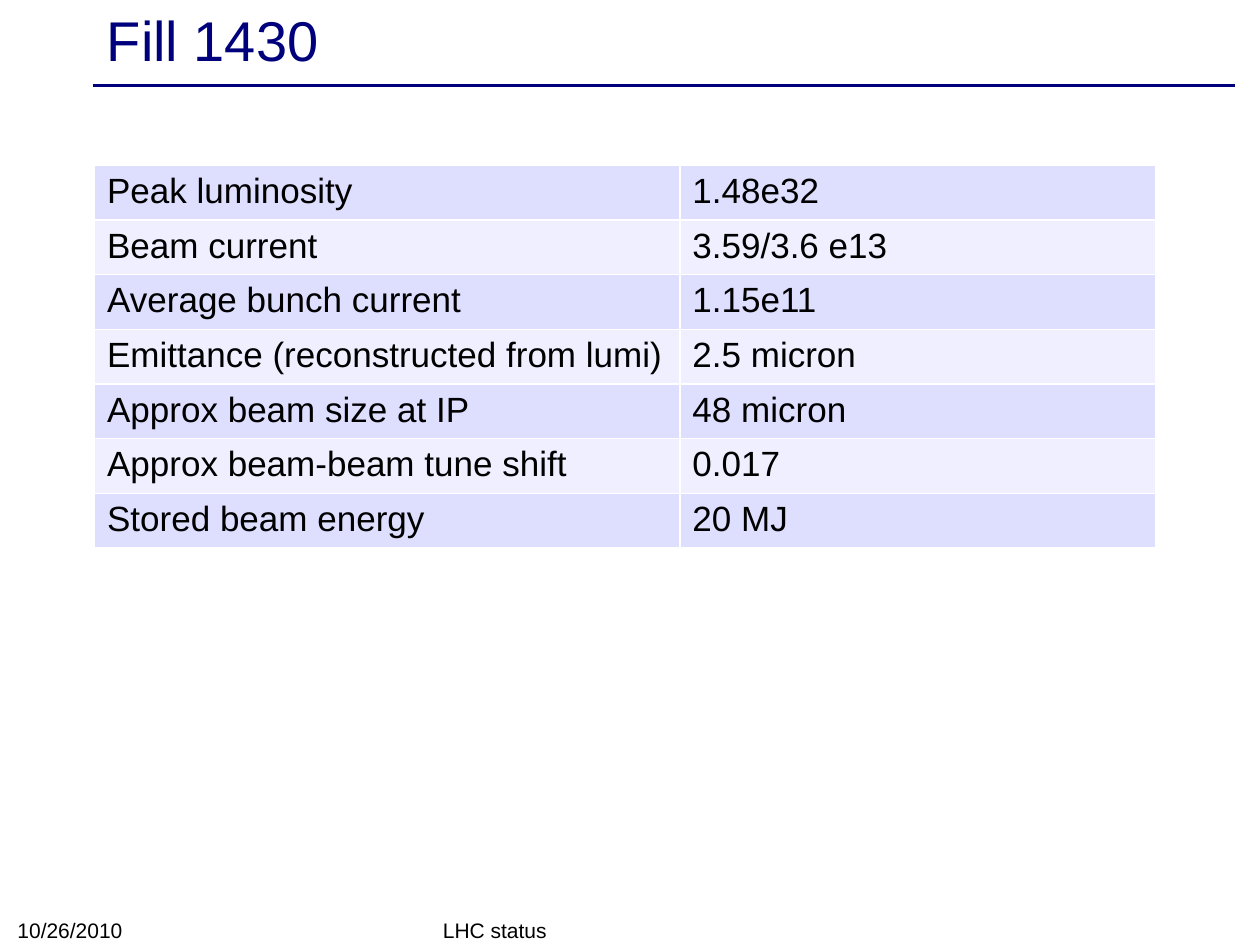
from lxml.etree import SubElement
from pptx import Presentation
from pptx.dml.color import RGBColor
from pptx.enum.shapes import MSO_CONNECTOR
from pptx.enum.text import MSO_ANCHOR, PP_ALIGN
from pptx.oxml.ns import qn
from pptx.util import Pt

NAVY, BLACK, WHITE = "00007D", "000000", "FFFFFF"
BANDS = ("DEDEFF", "EFEFFF")
FILL_FACTS = [
    ("Peak luminosity", "1.48e32"),
    ("Beam current", "3.59/3.6 e13"),
    ("Average bunch current", "1.15e11"),
    ("Emittance (reconstructed from lumi)", "2.5 micron"),
    ("Approx beam size at IP", "48 micron"),
    ("Approx beam-beam tune shift", "0.017"),
    ("Stored beam energy", "20 MJ"),
]


def color(hex_string):
    return RGBColor.from_string(hex_string)


class SlideBuilder:
    font = "Arial"

    def __init__(self, slide):
        self.slide = slide

    def add_span(self, frame, text, size, ink):
        para = frame.paragraphs[0]
        para.alignment = PP_ALIGN.LEFT
        span = para.add_run()
        span.text = text
        span.font.name = self.font
        span.font.size = Pt(size)
        span.font.color.rgb = color(ink)

    def text(self, left, top, width, height, text, size, ink, anchor):
        box = self.slide.shapes.add_textbox(Pt(left), Pt(top), Pt(width), Pt(height))
        frame = box.text_frame
        frame.word_wrap = True
        frame.vertical_anchor = anchor
        self.add_span(frame, text, size, ink)

    def rule(self, left, right, y, ink, weight):
        line = self.slide.shapes.add_connector(
            MSO_CONNECTOR.STRAIGHT, Pt(left), Pt(y), Pt(right), Pt(y))
        line.line.color.rgb = color(ink)
        line.line.width = Pt(weight)
        SubElement(line._element.spPr, qn("a:effectLst"))

    def border(self, cell, ink, weight):
        """Draw the same line on all four sides; call before filling the cell."""
        properties = cell._tc.get_or_add_tcPr()
        for side in ("a:lnL", "a:lnR", "a:lnT", "a:lnB"):
            line = SubElement(properties, qn(side), w=str(Pt(weight)))
            fill = SubElement(line, qn("a:solidFill"))
            SubElement(fill, qn("a:srgbClr"), val=ink)

    def table(self, left, top, widths, row_height, rows, size):
        frame = self.slide.shapes.add_table(
            len(rows), len(widths), Pt(left), Pt(top),
            Pt(sum(widths)), Pt(row_height * len(rows)))
        table = frame.table
        for column, width in zip(table.columns, widths):
            column.width = Pt(width)
        for index, values in enumerate(rows):
            table.rows[index].height = Pt(row_height)
            for cell, value in zip(table.rows[index].cells, values):
                self.border(cell, WHITE, 1)
                cell.fill.solid()
                cell.fill.fore_color.rgb = color(BANDS[index % 2])
                self.add_span(cell.text_frame, value, size, BLACK)


def main():
    deck = Presentation()
    deck.slide_width, deck.slide_height = Pt(720), Pt(540)
    builder = SlideBuilder(deck.slides.add_slide(deck.slide_layouts[6]))
    builder.rule(53, 706, 49, NAVY, 2)
    builder.text(54, 2, 648, 41, "Fill 1430", 32, NAVY, MSO_ANCHOR.MIDDLE)
    builder.text(246, 522, 228, 20, "LHC status", 12, BLACK, MSO_ANCHOR.BOTTOM)
    builder.text(2.9, 521, 168, 21, "10/26/2010", 12, BLACK, MSO_ANCHOR.BOTTOM)
    builder.table(54, 94.5, (334.5, 272), 29.5, FILL_FACTS, 20)
    deck.save("out.pptx")


if __name__ == "__main__":
    main()
